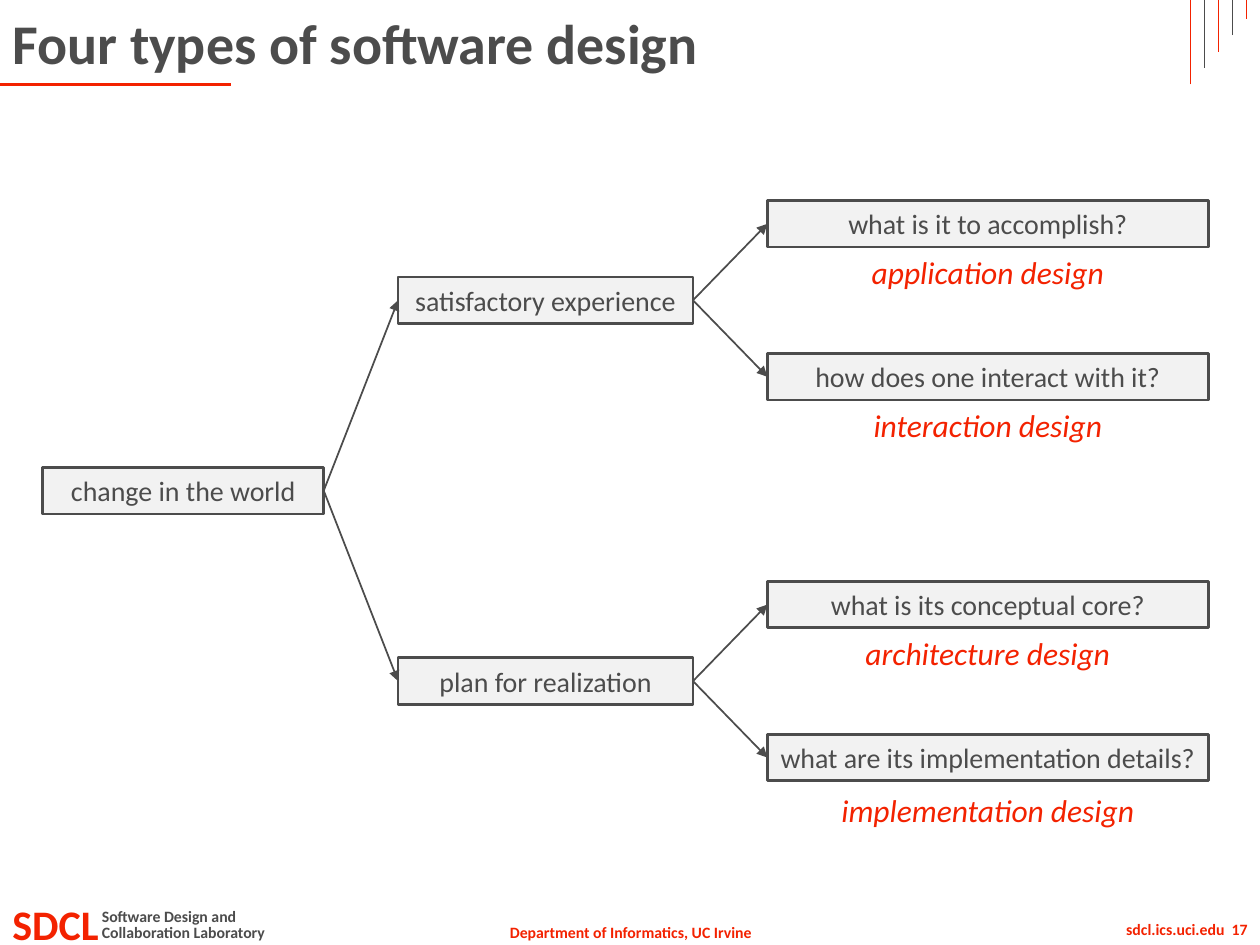
import pptx
import pptx.util
import pptx.dml.color
import pptx.enum.shapes
import pptx.enum.text
from dataclasses import dataclass
from lxml import etree

Pt = pptx.util.Pt
ALIGN = pptx.enum.text.PP_ALIGN
ANCHOR = pptx.enum.text.MSO_ANCHOR


@dataclass(frozen=True)
class Theme:
    font: str = "Calibri"
    ink: str = "4C4C4C"
    accent: str = "F32200"
    box_fill: str = "F2F2F2"
    title_size: float = 32
    logo_size: float = 24
    label_size: float = 18
    box_size: float = 16
    footer_size: float = 9


THEME = Theme()
TITLE = "Four types of software design"
ROOT = "change in the world"
BRANCHES = [
    ("satisfactory experience", [
        ("what is it to accomplish?", "application design", 27.5),
        ("how does one interact with it?", "interaction design", 27.5),
    ]),
    ("plan for realization", [
        ("what is its conceptual core?", "architecture design", 27.5),
        ("what are its implementation details?", "implementation design", 30),
    ]),
]
FOOTERS = [
    ("SDCL", (0, 509.8, 72, 36), THEME.logo_size, THEME.accent, ALIGN.LEFT),
    ("Software Design and", (51.1, 514.8, 120, 18), THEME.footer_size, THEME.ink, ALIGN.LEFT),
    ("Collaboration Laboratory", (51.1, 523.4, 120, 18), THEME.footer_size, THEME.ink, ALIGN.LEFT),
    ("Department of Informatics, UC Irvine", (280.4, 523.4, 160, 18), THEME.footer_size, THEME.accent, ALIGN.CENTER),
    ("sdcl.ics.uci.edu  17", (564.5, 522, 155.5, 18), THEME.footer_size, THEME.accent, ALIGN.RIGHT),
]

ROOT_COLUMN, BRANCH_COLUMN, LEAF_COLUMN = (24.5, 160.5), (227.5, 168.5), (438.5, 252)
ROOT_Y, BRANCH_OFFSET, LEAF_OFFSET = 280.4, 108.8, 43.7
BOX_HEIGHT, LABEL_HEIGHT = 26.6, 29
STRIPE_COUNT, STRIPE_LEFT, STRIPE_GAP, STRIPE_LENGTH, STRIPE_STEP = 5, 680, 8, 48.2, 9.36


def rgb(color):
    """Turn a hex string into a colour."""
    return pptx.dml.color.RGBColor.from_string(color)


def write(shape, text, size, color, align, bold=False, italic=False):
    """Put one styled, vertically centred line into a shape."""
    frame = shape.text_frame
    frame.text = text
    frame.word_wrap = True
    frame.vertical_anchor = ANCHOR.MIDDLE
    paragraph = frame.paragraphs[0]
    paragraph.alignment = align
    font = paragraph.runs[0].font
    font.name, font.size, font.bold, font.italic = THEME.font, Pt(size), bold, italic
    font.color.rgb = rgb(color)


def add_text(slide, text, bounds, size, color, align, **style):
    """Add a text box."""
    box = slide.shapes.add_textbox(*map(Pt, bounds))
    write(box, text, size, color, align, **style)


def add_box(slide, text, column, middle):
    """Add a diagram box centred on a height."""
    left, width = column
    box = slide.shapes.add_shape(
        pptx.enum.shapes.MSO_SHAPE.RECTANGLE,
        Pt(left), Pt(middle - BOX_HEIGHT / 2), Pt(width), Pt(BOX_HEIGHT))
    box.shadow.inherit = False
    box.fill.solid()
    box.fill.fore_color.rgb = rgb(THEME.box_fill)
    box.line.color.rgb = rgb(THEME.ink)
    box.line.width = Pt(1.5)
    write(box, text, THEME.box_size, THEME.ink, ALIGN.CENTER)
    box.text_frame.word_wrap = False
    return box


def add_line(slide, start, end, color, width):
    """Add a straight line without shadow."""
    line = slide.shapes.add_connector(
        pptx.enum.shapes.MSO_CONNECTOR.STRAIGHT, *map(Pt, (*start, *end)))
    line.line.color.rgb = rgb(color)
    line.line.width = Pt(width)
    etree.SubElement(line.element.spPr, pptx.oxml.ns.qn("a:effectLst"))
    return line


def add_arrow(slide, parent, child):
    """Join the right side of one box to the left side of the next."""
    arrow = add_line(slide, (0, 0), (1, 1), THEME.ink, 1)
    arrow.begin_connect(parent, 3)
    arrow.end_connect(child, 1)
    outline = arrow.line._get_or_add_ln()
    etree.SubElement(outline, pptx.oxml.ns.qn("a:tailEnd"), type="triangle")


def add_frame(slide):
    """Add the title, footers and decorative lines."""
    for text, bounds, size, color, align in FOOTERS:
        add_text(slide, text, bounds, size, color, align, bold=True)
    add_line(slide, (0, 48.2), (132, 48.2), THEME.accent, 1.5)
    for index in range(STRIPE_COUNT):
        x = STRIPE_LEFT + index * STRIPE_GAP
        color = (THEME.accent, THEME.ink)[index % 2]
        add_line(slide, (x, STRIPE_LENGTH - index * STRIPE_STEP), (x, 0), color, 0.5)
    add_text(slide, TITLE, (0, 0, 648, 48.2), THEME.title_size, THEME.ink, ALIGN.LEFT, bold=True)


def add_tree(slide):
    """Add the design tree with its labels."""
    root = add_box(slide, ROOT, ROOT_COLUMN, ROOT_Y)
    for branch_side, (branch_text, leaves) in zip((-1, 1), BRANCHES):
        branch_y = ROOT_Y + branch_side * BRANCH_OFFSET
        branch = add_box(slide, branch_text, BRANCH_COLUMN, branch_y)
        add_arrow(slide, root, branch)
        for leaf_side, (question, design, drop) in zip((-1, 1), leaves):
            leaf_y = branch_y + leaf_side * LEAF_OFFSET
            leaf = add_box(slide, question, LEAF_COLUMN, leaf_y)
            add_arrow(slide, branch, leaf)
            left, width = LEAF_COLUMN
            bounds = (left, leaf_y + drop - LABEL_HEIGHT / 2, width, LABEL_HEIGHT)
            add_text(slide, design, bounds, THEME.label_size, THEME.accent, ALIGN.CENTER, italic=True)


def main():
    """Build the slide and save it."""
    deck = pptx.Presentation()
    deck.slide_width, deck.slide_height = Pt(720), Pt(540)
    slide = deck.slides.add_slide(deck.slide_layouts[6])
    add_frame(slide)
    add_tree(slide)
    deck.save("out.pptx")


if __name__ == "__main__":
    main()
